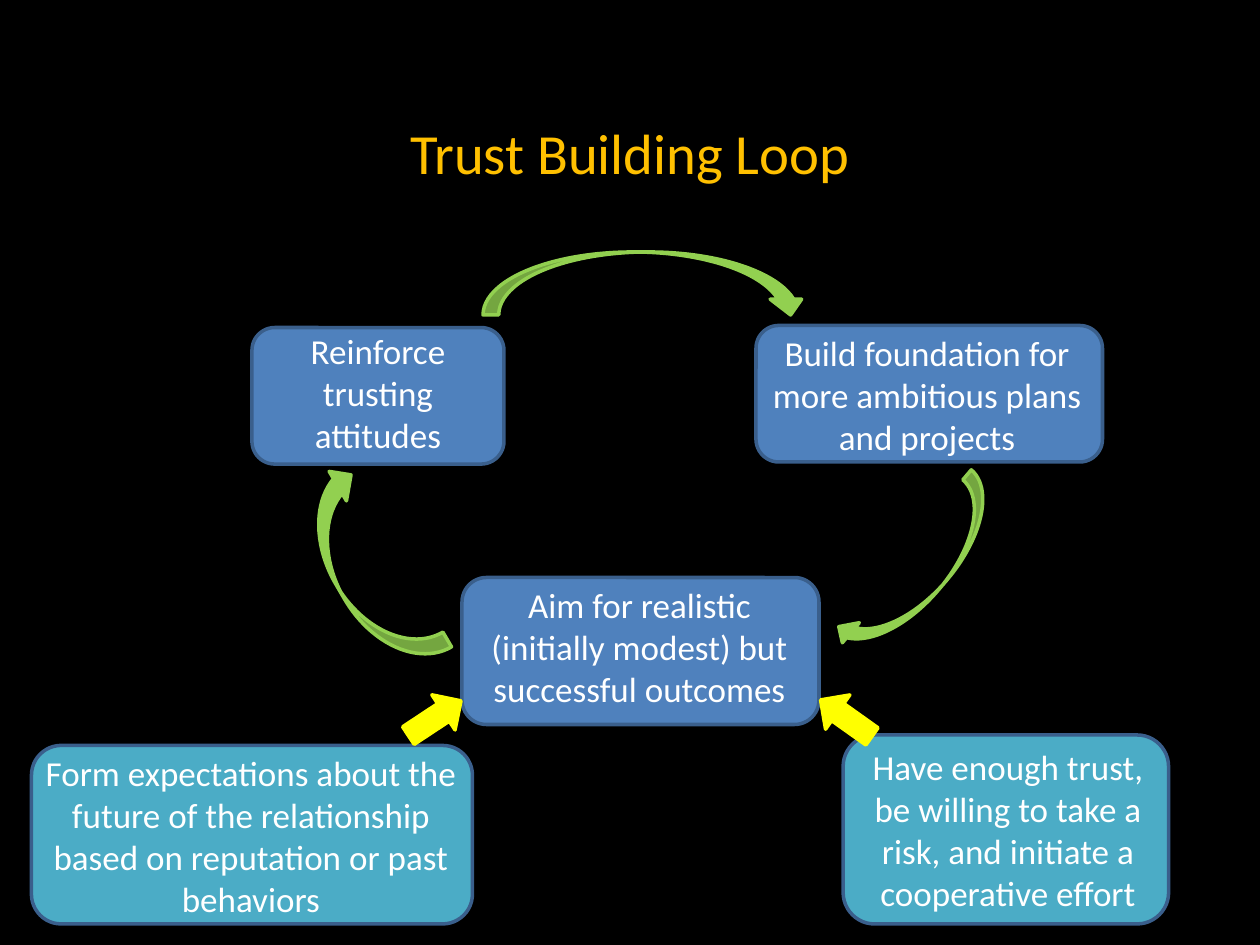
"""Build the Trust Building Loop slide."""
from pptx import Presentation
from pptx.dml.color import RGBColor
from pptx.enum.shapes import MSO_SHAPE
from pptx.enum.text import MSO_ANCHOR, MSO_AUTO_SIZE, PP_ALIGN
from pptx.util import Inches, Pt

BLACK = RGBColor(0x00, 0x00, 0x00)
WHITE = RGBColor(0xFF, 0xFF, 0xFF)
GOLD = RGBColor(0xFF, 0xC0, 0x00)
BLUE = RGBColor(0x4F, 0x81, 0xBD)
TEAL = RGBColor(0x4B, 0xAC, 0xC6)
NAVY = RGBColor(0x3A, 0x5F, 0x8C)
GREEN = RGBColor(0x92, 0xD0, 0x50)
YELLOW = RGBColor(0xFF, 0xFF, 0x00)

deck = Presentation()
deck.slide_width, deck.slide_height = Inches(10), Inches(7.5)
COLUMN, ROW = deck.slide_width / 120, deck.slide_height / 90

slide = deck.slides.add_slide(deck.slide_layouts[5])
slide.background.fill.solid()
slide.background.fill.fore_color.rgb = BLACK


def on_grid(left, top, width, height):
    return int(left * COLUMN), int(top * ROW), int(width * COLUMN), int(height * ROW)


def add_filled(kind, cells, fill, outline, rotation=0):
    filled = slide.shapes.add_shape(kind, *on_grid(*cells))
    filled.rotation = rotation
    filled.shadow.inherit = False
    filled.fill.solid()
    filled.fill.fore_color.rgb = fill
    filled.line.color.rgb = outline
    filled.line.width = Pt(2)


heading = slide.shapes.title
heading.left, heading.top, heading.width, heading.height = on_grid(6, 9, 108, 18)
heading.text_frame.text = "Trust Building Loop"
heading_format = {
    "vertical_anchor": MSO_ANCHOR.MIDDLE,
    "margin_bottom": Inches(0.64),
    "word_wrap": True,
    "auto_size": MSO_AUTO_SIZE.NONE,
}
for attribute, value in heading_format.items():
    setattr(heading.text_frame, attribute, value)

steps = [
    ("Reinforce trusting attitudes",
     BLUE, (24, 31.2, 24, 13), (24, 30.8, 24, 13.3)),
    ("Aim for realistic (initially modest) but successful outcomes",
     BLUE, (44, 55, 34, 14), (45.4, 55, 31, 13.3)),
    ("Build foundation for more ambitious plans and projects",
     BLUE, (72, 31, 33, 13), (70.8, 31, 35, 13.3)),
    ("Form expectations about the future of the relationship based on reputation or past behaviors",
     TEAL, (3, 71, 42, 17), (2.4, 71, 43, 17.4)),
    ("Have enough trust, be willing to take a risk, and initiate a cooperative effort",
     TEAL, (80.3, 70, 31, 18), (80, 70.4, 32, 17.4)),
]
captions = [(heading.text_frame, 32.4, GOLD)]
for wording, fill, box_cells, caption_cells in steps:
    add_filled(MSO_SHAPE.ROUNDED_RECTANGLE, box_cells, fill, NAVY)
    caption = slide.shapes.add_textbox(*on_grid(*caption_cells)).text_frame
    caption.text = wording
    caption.word_wrap = True
    caption.auto_size = MSO_AUTO_SIZE.SHAPE_TO_FIT_TEXT
    captions.append((caption, 20, WHITE))

for caption, size, color in captions:
    paragraph = caption.paragraphs[0]
    paragraph.alignment = PP_ALIGN.CENTER
    font = paragraph.runs[0].font
    font.color.rgb = color
    for attribute, value in {"name": "Calibri", "size": Pt(size)}.items():
        setattr(font, attribute, value)

arrows = [
    (MSO_SHAPE.CURVED_DOWN_ARROW, (46, 24, 30.8, 6), GREEN, 0),
    (MSO_SHAPE.CURVED_DOWN_ARROW, (24.7, 51.1, 20.6, 6.5), GREEN, 239.7),
    (MSO_SHAPE.CURVED_DOWN_ARROW, (77.3, 51.8, 20.8, 5), GREEN, 130.2),
    (MSO_SHAPE.LEFT_ARROW, (77.6, 66.4, 6, 4), YELLOW, 35.4),
    (MSO_SHAPE.LEFT_ARROW, (38.4, 66.4, 6, 4), YELLOW, 146.5),
]
for kind, cells, color, rotation in arrows:
    add_filled(kind, cells, color, color, rotation)

deck.save("out.pptx")
